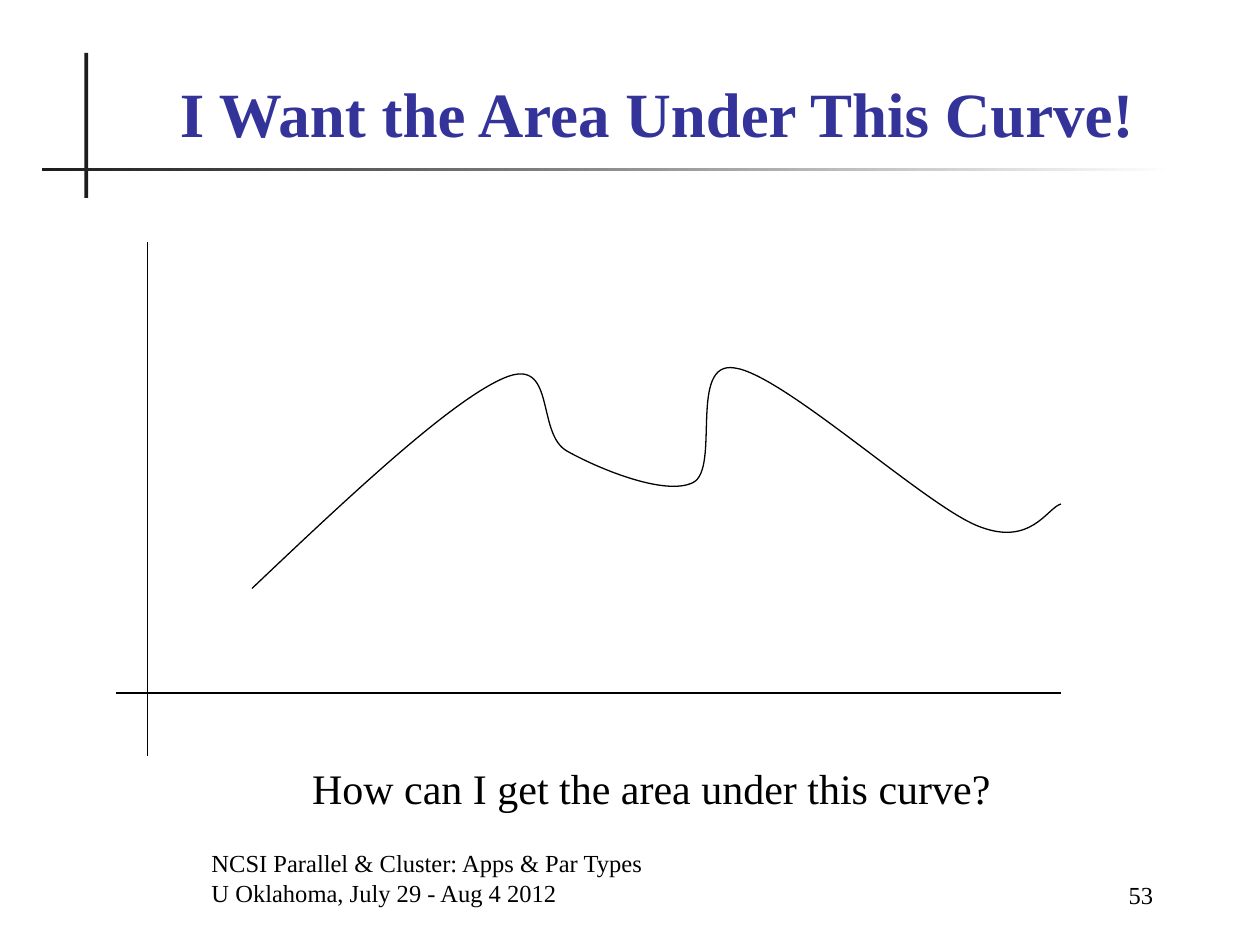
from itertools import chain

from lxml import etree
from pptx import Presentation
from pptx import util as u
from pptx.dml import color as dml
from pptx.enum import shapes, text
from pptx.oxml import ns

PX_PER_INCH = 100
FONT = "Times New Roman"
COLORS = {"title": "333399", "ink": "000000", "rule": "1C1C1C", "paper": "FFFFFF"}
CURVE_START = (200, 467)
CURVE_SEGMENTS = [
    [(279, 392), (358, 318), (400, 300)],
    [(442, 282), (425, 344), (450, 358)],
    [(475, 372), (528, 394), (550, 383)],
    [(572, 372), (546, 286), (583, 292)],
    [(621, 297), (732, 399), (775, 417)],
    [(818, 435), (831, 403), (842, 400)],
]


def px(length):
    """Turn px into EMU."""
    return u.Emu(length * u.Inches(1) // PX_PER_INCH)


def rgb(name):
    """Look up a named colour."""
    return dml.RGBColor.from_string(COLORS[name])


def fill_text(box, lines, size, align, anchor, color="ink", bold=False):
    """Write one formatted paragraph per line into a box."""
    frame = box.text_frame
    frame.word_wrap = True
    frame.auto_size = text.MSO_AUTO_SIZE.NONE
    frame.vertical_anchor = anchor
    frame.text = "\n".join(lines)
    for para in frame.paragraphs:
        para.alignment = align
        para.font.name = FONT
        para.font.size = u.Pt(size)
        para.font.bold = bold
        para.font.color.rgb = rgb(color)


def add_title(page, line, left, top, width, height):
    """Place and format the title placeholder."""
    title = page.shapes.title
    title.left, title.top, title.width, title.height = map(px, (left, top, width, height))
    fill_text(title, [line], 36, text.PP_ALIGN.CENTER, text.MSO_ANCHOR.BOTTOM, "title", True)


def add_label(page, lines, frame, size, align, anchor):
    """Add a text box."""
    box = page.shapes.add_textbox(*map(px, frame))
    fill_text(box, lines, size, align, anchor)


def add_bar(page, frame, fade=False):
    """Add a thin decorative bar, solid or fading to the paper colour."""
    bar = page.shapes.add_shape(shapes.MSO_SHAPE.RECTANGLE, *map(px, frame))
    bar.shadow.inherit = False
    bar.line.fill.background()
    if fade:
        bar.fill.gradient()
        bar.fill.gradient_angle = 0
        for stop, name in zip(bar.fill.gradient_stops, ("rule", "paper")):
            stop.color.rgb = rgb(name)
    else:
        bar.fill.solid()
        bar.fill.fore_color.rgb = rgb("rule")


def style_line(shape):
    """Give a line or curve its thin ink stroke."""
    shape.line.color.rgb = rgb("ink")
    shape.line.width = u.Pt(0.75)


def add_axis(page, *ends):
    """Add a straight axis line."""
    axis = page.shapes.add_connector(shapes.MSO_CONNECTOR.STRAIGHT, *map(px, ends))
    style_line(axis)
    etree.SubElement(axis._element.spPr, ns.qn("a:effectLst"))


def add_curve(page, start, segments):
    """Add an open curve, turning each three vertices into a cubic segment."""
    builder = page.shapes.build_freeform(*start, scale=px(1))
    builder.add_line_segments(list(chain.from_iterable(segments)), close=False)
    curve = builder.convert_to_shape()
    curve.shadow.inherit = False
    curve.fill.background()
    style_line(curve)
    outline = next(curve._element.iter(ns.qn("a:path")))
    lines = outline.findall(ns.qn("a:lnTo"))
    for first in range(0, len(lines), 3):
        cubic = etree.SubElement(outline, ns.qn("a:cubicBezTo"))
        for line in lines[first:first + 3]:
            cubic.append(line[0])
            outline.remove(line)


def main():
    """Build the slide and save it."""
    deck = Presentation()
    deck.slide_width, deck.slide_height = px(1000), px(750)
    page = deck.slides.add_slide(deck.slide_layouts.get_by_name("Title Only"))
    align, anchor = text.PP_ALIGN, text.MSO_ANCHOR

    add_bar(page, (67, 42, 3, 115))
    add_bar(page, (33, 133, 900, 3), fade=True)
    add_title(page, "I Want the Area Under This Curve!", 83, 50, 877, 74)
    add_axis(page, 117, 192, 117, 600)
    add_axis(page, 92, 550, 842, 550)
    add_curve(page, CURVE_START, CURVE_SEGMENTS)
    add_label(page, ["How can I get the area under this curve?"],
              (92, 600, 850, 50), 24, align.CENTER, anchor.TOP)
    add_label(page, ["NCSI Parallel & Cluster: Apps & Par Types",
                     "U Oklahoma, July 29 - Aug 4 2012"],
              (158, 675, 608, 50), 14, align.LEFT, anchor.BOTTOM)
    add_label(page, ["53"], (783, 677, 142, 50), 14, align.RIGHT, anchor.BOTTOM)
    deck.save("out.pptx")


if __name__ == "__main__":
    main()
